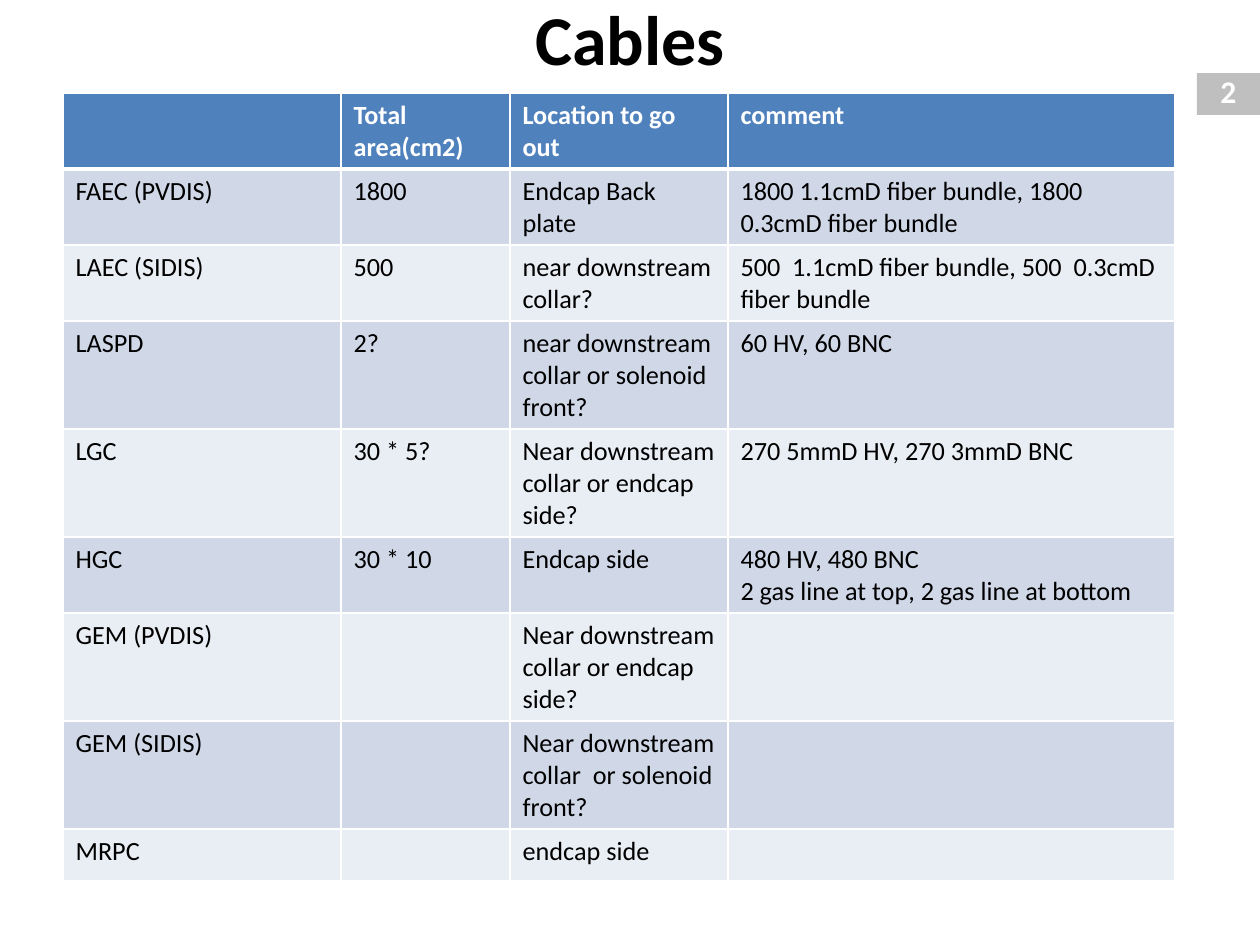
import pptx
import pptx.dml.color
import pptx.enum.shapes
import pptx.enum.text
import pptx.oxml
import pptx.oxml.ns
import pptx.util

SCALE = 914400 // 126  # EMU per px
FONT = "Calibri"
WHITE, BLACK, GREY = "FFFFFF", "000000", "BFBFBF"
HEAD, BANDS = "4F81BD", ("D0D8E8", "E9EDF4")

COLS = (278, 169, 218, 447)
LINES = (2, 2, 2, 3, 3, 2, 3, 3, 1)  # text lines in each row
ROWS = (
    ("", "Total area(cm2)", "Location to go out", "comment"),
    ("FAEC (PVDIS)", "1800", "Endcap Back plate",
     "1800 1.1cmD fiber bundle, 1800 0.3cmD fiber bundle"),
    ("LAEC (SIDIS)", "500", "near downstream collar?",
     "500  1.1cmD fiber bundle, 500  0.3cmD fiber bundle"),
    ("LASPD", "2?", "near downstream collar or solenoid front?", "60 HV, 60 BNC"),
    ("LGC", "30 * 5?", "Near downstream collar or endcap side?",
     "270 5mmD HV, 270 3mmD BNC"),
    ("HGC", "30 * 10", "Endcap side",
     "480 HV, 480 BNC\n2 gas line at top, 2 gas line at bottom"),
    ("GEM (PVDIS)", "", "Near downstream collar or endcap side?", ""),
    ("GEM (SIDIS)", "", "Near downstream collar  or solenoid front?", ""),
    ("MRPC", "", "endcap side", ""),
)


def px(n):
    return pptx.util.Emu(n * SCALE)


def color(code):
    return pptx.dml.color.RGBColor.from_string(code)


def write(frame, text, size, ink, bold=False, align=None):
    """Fill a text frame, one paragraph for each line of text."""
    for i, line in enumerate(text.split("\n")):
        para = frame.add_paragraph() if i else frame.paragraphs[0]
        para.alignment = align
        para.font.size = pptx.util.Pt(size)
        if not line:
            continue
        run = para.add_run()
        run.text = line
        run.font.name = FONT
        run.font.size = pptx.util.Pt(size)
        run.font.bold = bold
        run.font.color.rgb = color(ink)


def label(slide, box, text, size, ink):
    """Add a bold, centred text box."""
    frame = slide.shapes.add_textbox(*map(px, box)).text_frame
    frame.word_wrap = True
    frame.vertical_anchor = pptx.enum.text.MSO_ANCHOR.MIDDLE
    write(frame, text, size, ink, True, pptx.enum.text.PP_ALIGN.CENTER)


def block(slide, box, fill):
    """Add a plain rectangle."""
    kind = pptx.enum.shapes.MSO_SHAPE.RECTANGLE
    shape = slide.shapes.add_shape(kind, *map(px, box))
    shape.shadow.inherit = False
    shape.fill.solid()
    shape.fill.fore_color.rgb = color(fill)
    shape.line.fill.background()


def edge(cell, side, width):
    """Draw one white cell border, width in points."""
    space = pptx.oxml.ns.nsdecls("a")
    line = pptx.oxml.parse_xml(
        f'<a:{side} {space} w="{pptx.util.Pt(width)}"><a:solidFill>'
        f'<a:srgbClr val="{WHITE}"/></a:solidFill></a:{side}>')
    cell._tc.get_or_add_tcPr().append(line)


def grid(slide, left, top):
    """Add the cable table with a header and banded rows."""
    tall = [12 + 32 * n for n in LINES]
    tall[-1] = 52
    box = (left, top, sum(COLS), sum(tall))
    table = slide.shapes.add_table(len(ROWS), len(COLS), *map(px, box)).table
    for col, wide in zip(table.columns, COLS):
        col.width = px(wide)
    for r, texts in enumerate(ROWS):
        table.rows[r].height = px(tall[r])
        for c, text in enumerate(texts):
            cell = table.cell(r, c)
            for side in ("lnL", "lnR", "lnT", "lnB"):
                thick = (r == 0 and side == "lnB") or (r == 1 and side == "lnT")
                edge(cell, side, 3 if thick else 1)
            cell.fill.solid()
            cell.fill.fore_color.rgb = color(BANDS[(r - 1) % 2] if r else HEAD)
            write(cell.text_frame, text, 15, BLACK if r else WHITE, r == 0)


def main():
    deck = pptx.Presentation()
    deck.slide_width, deck.slide_height = px(1260), px(945)
    slide = deck.slides.add_slide(deck.slide_layouts[6])

    # Page number
    block(slide, (1197, 73, 63, 42), GREY)
    label(slide, (1197, 66, 63, 50), "2", 18, WHITE)

    # Title and table
    label(slide, (63, -41, 1134, 157), "Cables", 40, BLACK)
    grid(slide, 63, 93)

    deck.save("out.pptx")


if __name__ == "__main__":
    main()
